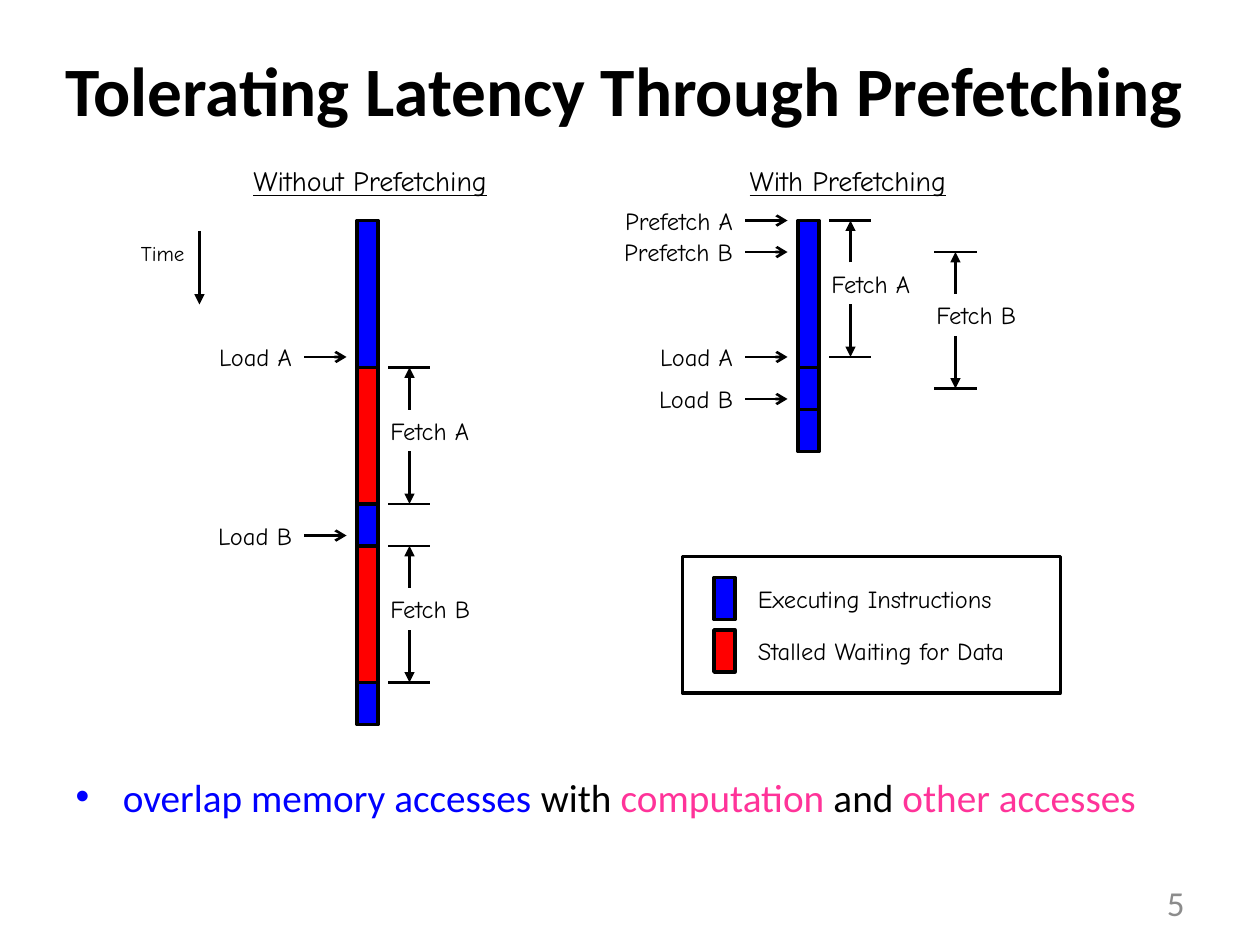
"""Build the slide on tolerating latency through prefetching."""
from lxml import etree
from pptx import Presentation
from pptx import util as u
from pptx.dml.color import RGBColor
from pptx.enum import shapes, text
from pptx.oxml.ns import qn

COLOURS = {"ink": "000000", "run": "0000FF", "stall": "FF0000",
           "accent": "FF3399", "number": "8C8C8C"}
COLUMNS, ROWS = 120, 90
ALIGN = text.PP_ALIGN


def colour(name):
    return RGBColor.from_string(COLOURS[name])


def add_span(para, words, size=14, font="Comic Neue", ink="ink", **style):
    span = para.add_run()
    span.text = words
    span.font.size = u.Pt(size)
    span.font.name = font
    span.font.color.rgb = colour(ink)
    for key, value in style.items():
        setattr(span.font, key, value)


class Sketch:
    def __init__(self, deck):
        self.cell_width = deck.slide_width / COLUMNS
        self.cell_height = deck.slide_height / ROWS
        self.page = deck.slides.add_slide(deck.slide_layouts[1])

    def area(self, column, row, width, height):
        return (round(column * self.cell_width), round(row * self.cell_height),
                round(width * self.cell_width), round(height * self.cell_height))

    def placeholder(self, index, area, spans, **style):
        holder = self.page.placeholders[index]
        holder.left, holder.top, holder.width, holder.height = self.area(*area)
        holder.text_frame.auto_size = text.MSO_AUTO_SIZE.NONE
        para = holder.text_frame.paragraphs[0]
        para.alignment = ALIGN.LEFT
        for words, ink in spans:
            add_span(para, words, font="Calibri", ink=ink, **style)

    def label(self, column, row, width, words, height=4, align=ALIGN.LEFT, **style):
        box = self.page.shapes.add_textbox(*self.area(column, row, width, height))
        box.text_frame.word_wrap = False
        box.text_frame.auto_size = text.MSO_AUTO_SIZE.SHAPE_TO_FIT_TEXT
        para = box.text_frame.paragraphs[0]
        para.alignment = align
        add_span(para, words, **style)

    def block(self, column, row, width, height, fill=None):
        block = self.page.shapes.add_shape(
            shapes.MSO_SHAPE.RECTANGLE, *self.area(column, row, width, height))
        block.shadow.inherit = False
        if fill:
            block.fill.solid()
            block.fill.fore_color.rgb = colour(fill)
        else:
            block.fill.background()
        block.line.color.rgb = colour("ink")
        block.line.width = u.Pt(2)

    def line(self, start, end, weight=1.5, head=None):
        line = self.page.shapes.add_connector(
            shapes.MSO_CONNECTOR.STRAIGHT, *self.area(*start, *end))
        line.line.color.rgb = colour("ink")
        line.line.width = u.Pt(weight)
        if head:
            etree.SubElement(line.line._get_or_add_ln(), qn("a:tailEnd"), type=head)
        etree.SubElement(line._element.spPr, qn("a:effectLst"))

    def bar(self, column, edges, fills):
        for top, bottom, fill in zip(edges, edges[1:], fills):
            self.block(column, top, 2, bottom - top, fill)

    def event(self, column, row, words, width):
        self.label(column - width, row - 2, width, words, align=ALIGN.RIGHT)
        self.line((column, row), (column + 4, row), head="arrow")

    def fetch(self, column, row, words):
        for edge in (row, row + 13):
            self.line((column, edge), (column + 4, edge))
        middle = column + 2
        self.line((middle, row + 8), (middle, row + 13), 1.75, "triangle")
        self.line((middle, row + 4), (middle, row), 1.75, "triangle")
        self.label(column - 1, row + 4, 11.1, words)


def main():
    deck = Presentation()
    deck.slide_width, deck.slide_height = u.Inches(10), u.Inches(7.5)
    sketch = Sketch(deck)

    sketch.placeholder(0, (5, 1, 115, 15),
                       [("Tolerating Latency Through Prefetching", "ink")],
                       size=39.6, bold=True)
    sketch.placeholder(1, (6, 73, 108, 7),
                       [("overlap memory accesses", "run"), (" with ", "ink"),
                        ("computation", "accent"), (" and ", "ink"),
                        ("other accesses", "accent")], size=22.4)
    sketch.label(86, 83.4, 28, "5", height=4.8, align=ALIGN.RIGHT,
                 size=20, font="Calibri", ink="number")

    for column, width, words in ((21, 28.5, "Without Prefetching"),
                                 (68.5, 24.5, "With Prefetching")):
        sketch.label(column, 15, width, words, height=4.4, align=ALIGN.CENTER,
                     size=16, underline=True)
    sketch.line((19, 22), (19, 29), 1.75, "triangle")
    sketch.label(12, 22.3, 7, "Time", height=3.6, align=ALIGN.CENTER, size=12)

    sketch.bar(34, (21, 35, 48, 52, 65, 69), ("run", "stall", "run", "stall", "run"))
    sketch.bar(76, (21, 35, 39, 43), ("run",) * 3)

    for column, row, words, width in (
            (29, 34, "Load A", 9.9), (29, 51, "Load B", 9.9),
            (71, 21, "Prefetch A", 14.5), (71, 24, "Prefetch B", 14.5),
            (71, 34, "Load A", 9.9), (71, 38, "Load B", 9.9)):
        sketch.event(column, row, words, width)
    for column, row, words in ((37, 35, "Fetch A"), (37, 52, "Fetch B"),
                               (79, 21, "Fetch A"), (89, 24, "Fetch B")):
        sketch.fetch(column, row, words)

    sketch.block(65, 53, 36, 13)
    for row, fill, words, width in ((55, "run", "Executing Instructions", 27.7),
                                    (60, "stall", "Stalled Waiting for Data", 29.8)):
        sketch.block(68, row, 2, 4, fill)
        sketch.label(71, row, width, words)

    deck.save("out.pptx")


if __name__ == "__main__":
    main()
